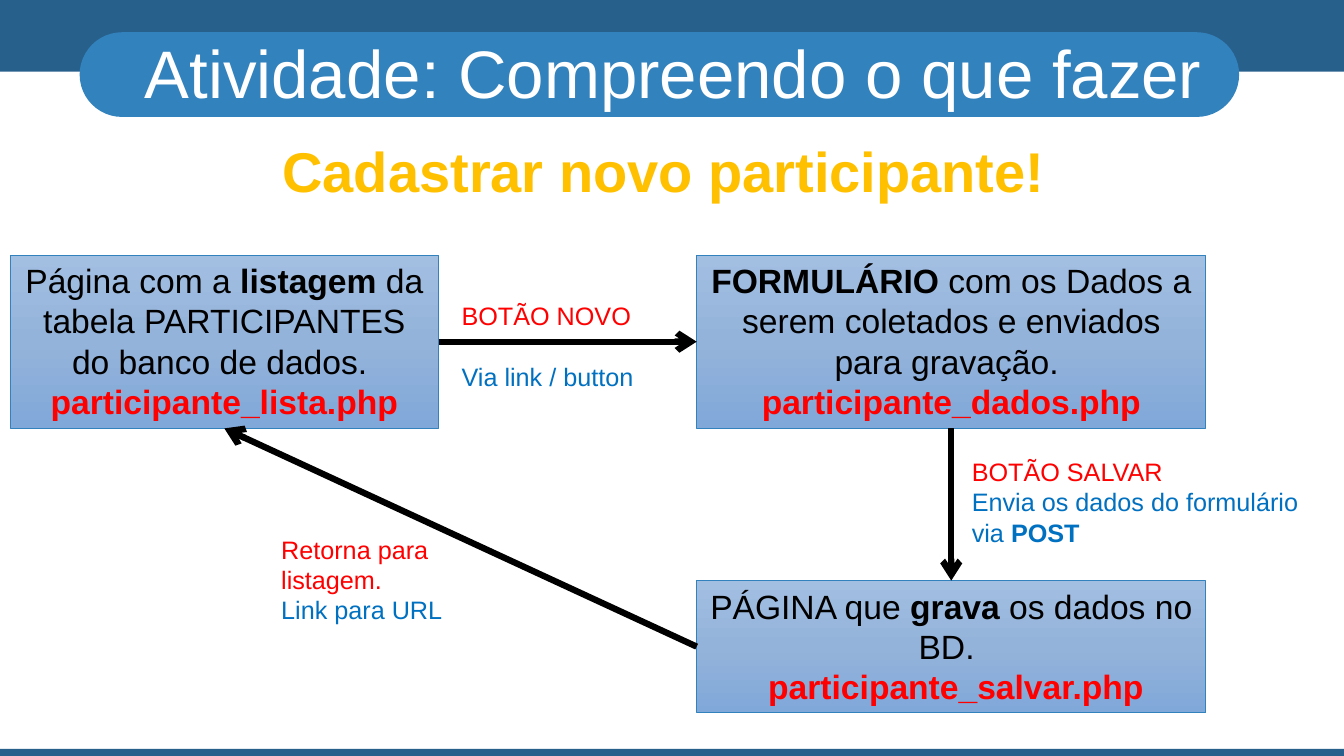
import copy

import pptx
import pptx.dml.color
import pptx.enum.shapes
import pptx.enum.text
import pptx.oxml
import pptx.util

RGBColor = pptx.dml.color.RGBColor
Inches = pptx.util.Inches
Pt = pptx.util.Pt
Shape = pptx.enum.shapes.MSO_SHAPE
Align = pptx.enum.text.PP_ALIGN
Anchor = pptx.enum.text.MSO_ANCHOR

NAVY = RGBColor(0x28, 0x60, 0x8C)
BLUE = RGBColor(0x32, 0x82, 0xBE)
LINK_BLUE = RGBColor(0x00, 0x70, 0xC0)
RED = RGBColor(0xFF, 0x00, 0x00)
GOLD = RGBColor(0xFF, 0xC0, 0x00)
WHITE = RGBColor(0xFF, 0xFF, 0xFF)
BLACK = RGBColor(0x00, 0x00, 0x00)
BOX_GRADIENT = [
    (0, RGBColor(0xA2, 0xBE, 0xE1)),
    (0.5, RGBColor(0x94, 0xB3, 0xDA)),
    (1, RGBColor(0x80, 0xA8, 0xD9)),
]

# Connection sites of a rectangle
TOP, LEFT, BOTTOM, RIGHT = range(4)


def add_text(paragraph, text, size=18, color=BLACK, bold=False):
    run = paragraph.add_run()
    run.text = text
    run.font.name = "Arial"
    run.font.size = Pt(size)
    run.font.color.rgb = color
    run.font.bold = bold


class SlideBuilder:
    def __init__(self, slide):
        self.slide = slide

    def fill_frame(self, shape, paragraphs, align, anchor, gap=0, **text_format):
        """Each paragraph is a list of (text, format) pairs."""
        frame = shape.text_frame
        frame.word_wrap = True
        frame.vertical_anchor = anchor
        for index, runs in enumerate(paragraphs):
            paragraph = frame.add_paragraph() if index else frame.paragraphs[0]
            paragraph.alignment = align
            if index and gap:
                paragraph.space_before = Pt(gap)
            for text, changes in runs:
                add_text(paragraph, text, **{**text_format, **changes})
        return frame

    def band(self, left, top, width, height, color, kind=Shape.RECTANGLE):
        shape = self.slide.shapes.add_shape(
            kind, Inches(left), Inches(top), Inches(width), Inches(height))
        shape.shadow.inherit = False
        shape.fill.solid()
        shape.fill.fore_color.rgb = color
        shape.line.fill.background()
        return shape

    def page_box(self, left, top, width, height, description, file_name):
        shape = self.band(left, top, width, height, BLUE)
        shape.line.color.rgb = BLUE
        shape.line.width = Pt(0.5)
        shape.fill.gradient()
        shape.fill.gradient_angle = 270
        first_stop = shape._element.xpath(".//a:gs")[0]
        first_stop.addnext(copy.deepcopy(first_stop))
        for stop, (position, color) in zip(shape.fill.gradient_stops, BOX_GRADIENT):
            stop.position = position
            stop.color.rgb = color
        file_run = (file_name, {"color": RED, "bold": True})
        self.fill_frame(shape, [description, [file_run]],
                        Align.CENTER, Anchor.TOP, size=24)
        return shape

    def text_box(self, left, top, width, height, paragraphs,
                 align=Align.LEFT, anchor=Anchor.TOP, **options):
        box = self.slide.shapes.add_textbox(
            Inches(left), Inches(top), Inches(width), Inches(height))
        return self.fill_frame(box, paragraphs, align, anchor, **options)

    def heading(self, left, top, text, **text_format):
        frame = self.text_box(left, top, 12.66, 0.79, [[(text, {})]],
                              Align.CENTER, Anchor.MIDDLE, **text_format)
        frame.paragraphs[0].line_spacing = 0.9
        frame.paragraphs[0].space_before = Pt(10)

    def arrow(self, source, source_side, target, target_side):
        connector = self.slide.shapes.add_connector(
            pptx.enum.shapes.MSO_CONNECTOR.STRAIGHT, 0, 0, 0, 0)
        connector.begin_connect(source, source_side)
        connector.end_connect(target, target_side)
        connector.line.color.rgb = BLACK
        connector.line.width = Pt(4.5)
        namespace = 'xmlns:a="http://schemas.openxmlformats.org/drawingml/2006/main"'
        connector.line._get_or_add_ln().append(
            pptx.oxml.parse_xml(f'<a:tailEnd {namespace} type="arrow"/>'))
        connector._element.spPr.append(
            pptx.oxml.parse_xml(f"<a:effectLst {namespace}/>"))


def main():
    presentation = pptx.Presentation()
    presentation.slide_width = Inches(13.33)
    presentation.slide_height = Inches(7.5)
    slide = presentation.slides.add_slide(presentation.slide_layouts[6])
    builder = SlideBuilder(slide)
    bold = {"bold": True}
    blue = {"color": LINK_BLUE}

    # Frame of the page
    builder.band(0, 0, 13.33, 0.71, NAVY)
    title_pill = builder.band(0.79, 0.32, 11.5, 0.84, BLUE, Shape.ROUNDED_RECTANGLE)
    title_pill.adjustments[0] = 0.5
    builder.band(0, 7.43, 13.33, 0.07, NAVY)

    # Headings
    builder.heading(0.35, 0.37, "Atividade: Compreendo o que fazer",
                    size=48, color=WHITE)
    builder.heading(0.25, 1.33, "Cadastrar novo participante!",
                    size=40, color=GOLD, bold=True)

    # Pages of the flow
    form_page = builder.page_box(
        6.91, 2.53, 5.05, 1.72,
        [("FORMULÁRIO", bold),
         (" com os Dados a serem coletados e enviados para gravação. ", {})],
        "participante_dados.php")
    save_page = builder.page_box(
        6.91, 5.76, 5.05, 1.31,
        [("PÁGINA que ", {}), ("grava", bold), (" os dados no BD. ", {})],
        " participante_salvar.php")
    list_page = builder.page_box(
        0.1, 2.53, 4.25, 1.72,
        [("Página com a ", {}), ("listagem", bold),
         (" da tabela PARTICIPANTES do banco de dados. ", {})],
        "participante_lista.php")

    # Steps between the pages
    builder.arrow(list_page, RIGHT, form_page, LEFT)
    builder.arrow(form_page, BOTTOM, save_page, TOP)
    builder.arrow(save_page, LEFT, list_page, BOTTOM)

    # Step labels
    builder.text_box(4.48, 2.93, 2.24, 1.31,
                     [[("BOTÃO NOVO", {})], [("Via link / button", blue)]],
                     gap=22, color=RED)
    builder.text_box(9.54, 4.48, 3.51, 1.01,
                     [[("BOTÃO SALVAR", {})],
                      [("Envia os dados do formulário via ", blue),
                       ("POST", {**blue, **bold})]],
                     color=RED)
    builder.text_box(2.69, 5.25, 1.91, 1.01,
                     [[("Retorna para listagem.", {})], [("Link para URL", blue)]],
                     color=RED)

    presentation.save("out.pptx")


if __name__ == "__main__":
    main()
